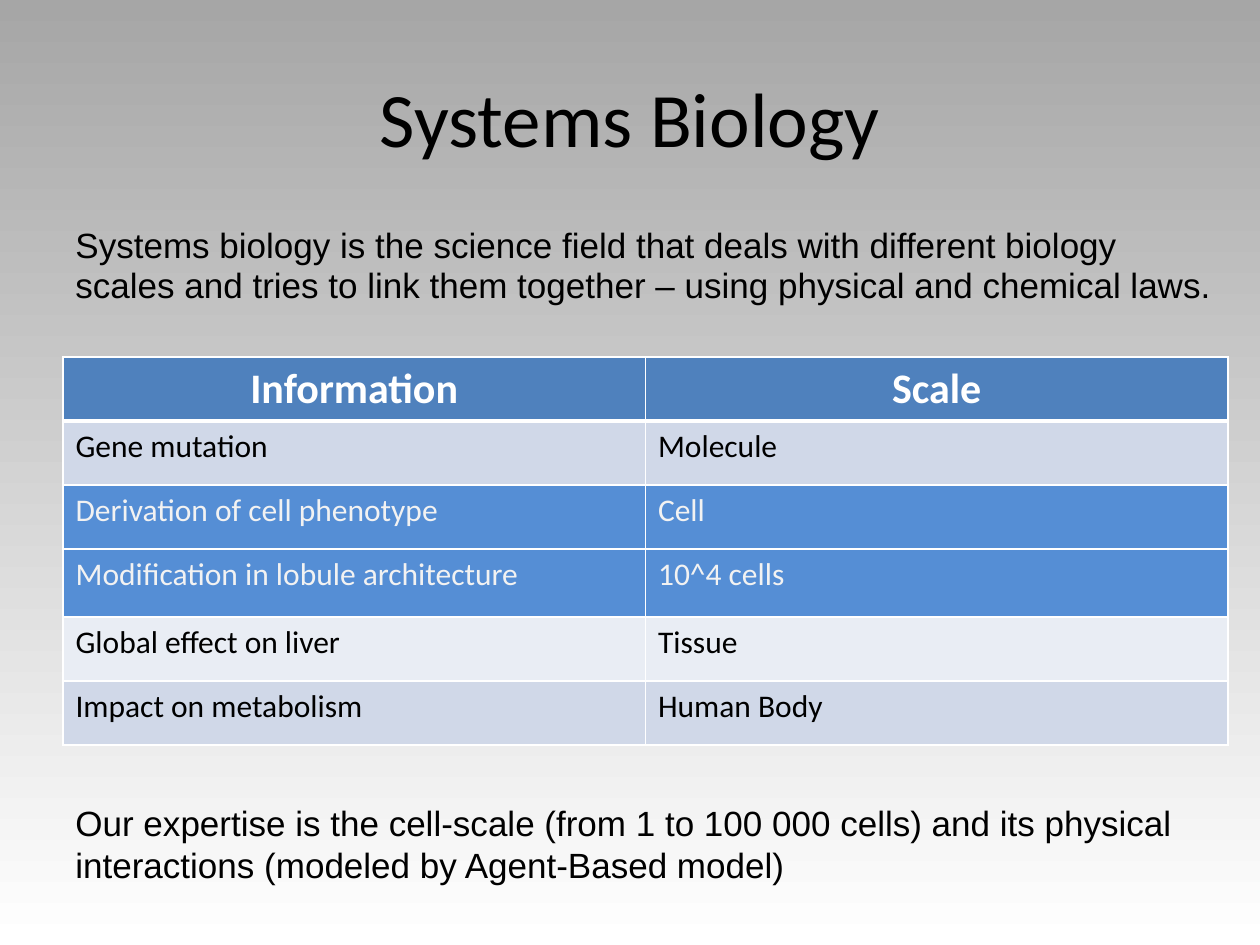
"""Build the Systems Biology slide with its table of information and scales."""
from dataclasses import dataclass

from lxml import etree
from pptx import Presentation
from pptx.dml.color import RGBColor
from pptx.enum.text import MSO_ANCHOR, MSO_AUTO_SIZE, PP_ALIGN
from pptx.oxml.ns import qn
from pptx.util import Pt

CENTER, LEFT = PP_ALIGN.CENTER, PP_ALIGN.LEFT
MIDDLE = MSO_ANCHOR.MIDDLE
GROW = MSO_AUTO_SIZE.SHAPE_TO_FIT_TEXT
PX = 914400 / 126


@dataclass(frozen=True)
class Theme:
    heading_font: str = "Calibri"
    body_font: str = "Arial"
    title_size: int = 44
    header_size: int = 24
    body_size: int = 20
    row_size: int = 18
    black: str = "000000"
    white: str = "FFFFFF"
    pale: str = "F2F2F2"
    sky: str = "A6A6A6"
    header_fill: str = "4F81BD"
    focus_fill: str = "558ED5"
    dark_band: str = "D0D8E8"
    light_band: str = "E9EDF4"


THEME = Theme()


def emu(*lengths):
    return [round(length * PX) for length in lengths]


def style(paragraph, font_name, size, color, bold=False, align=LEFT):
    paragraph.alignment = align
    for run in paragraph.runs:
        run.font.name = font_name
        run.font.size = Pt(size)
        run.font.bold = bold
        run.font.color.rgb = RGBColor.from_string(color)


deck = Presentation()
deck.slide_width, deck.slide_height = emu(1260, 945)
slide = deck.slides.add_slide(deck.slide_layouts[5])

backdrop = slide.background.fill
backdrop.gradient()
backdrop.gradient_angle = 270
for stop, shade in zip(backdrop.gradient_stops, (THEME.sky, THEME.white)):
    stop.color.rgb = RGBColor.from_string(shade)

title = slide.shapes.title
title.left, title.top, title.width, title.height = emu(63, 38, 1134, 158)
title.text_frame.text = "Systems Biology"
title.text_frame.vertical_anchor = MIDDLE
style(title.text_frame.paragraphs[0], THEME.heading_font, THEME.title_size,
      THEME.black, align=CENTER)

STATEMENTS = [
    (220, 93, 0.95, "Systems biology is the science field that deals with different "
     "biology scales and tries to link them together – using physical and "
     "chemical laws."),
    (795, 136, 1.0, "Our expertise is the cell-scale (from 1 to 100 000 cells) and "
     "its physical interactions (modeled by Agent-Based model)"),
]
for top, height, spacing, wording in STATEMENTS:
    statement = slide.shapes.add_textbox(*emu(63, top, 1165, height)).text_frame
    statement.word_wrap = True
    statement.auto_size = GROW
    statement.text = wording
    statement.paragraphs[0].line_spacing = spacing
    style(statement.paragraphs[0], THEME.body_font, THEME.body_size, THEME.black)

SCALES = [
    ("Information", "Scale", 64, THEME.header_fill, THEME.white),
    ("Gene mutation", "Molecule", 64, THEME.dark_band, THEME.black),
    ("Derivation of cell phenotype", "Cell", 64, THEME.focus_fill, THEME.pale),
    ("Modification in lobule architecture", "10^4 cells", 68, THEME.focus_fill,
     THEME.pale),
    ("Global effect on liver", "Tissue", 64, THEME.light_band, THEME.black),
    ("Impact on metabolism", "Human Body", 64, THEME.dark_band, THEME.black),
]
table_height = sum(scale[2] for scale in SCALES)
table = slide.shapes.add_table(len(SCALES), 2,
                               *emu(63, 357, 1165, table_height)).table

for row_index, (information, scale, height, fill, ink) in enumerate(SCALES):
    is_header = row_index == 0
    table.rows[row_index].height = emu(height)[0]
    for column_index, wording in enumerate((information, scale)):
        cell = table.cell(row_index, column_index)
        cell.text_frame.text = wording
        style(cell.text_frame.paragraphs[0], THEME.heading_font,
              THEME.header_size if is_header else THEME.row_size, ink,
              bold=is_header, align=CENTER if is_header else LEFT)
        cell.fill.solid()
        cell.fill.fore_color.rgb = RGBColor.from_string(fill)
        properties = cell._tc.get_or_add_tcPr()
        for position, side in enumerate(("lnL", "lnR", "lnT", "lnB")):
            heavy = (is_header and side == "lnB") or (row_index == 1 and side == "lnT")
            border = etree.Element(qn(f"a:{side}"), w=str(Pt(3 if heavy else 1)))
            solid = etree.SubElement(border, qn("a:solidFill"))
            etree.SubElement(solid, qn("a:srgbClr"), val=THEME.white)
            properties.insert(position, border)

deck.save("out.pptx")
